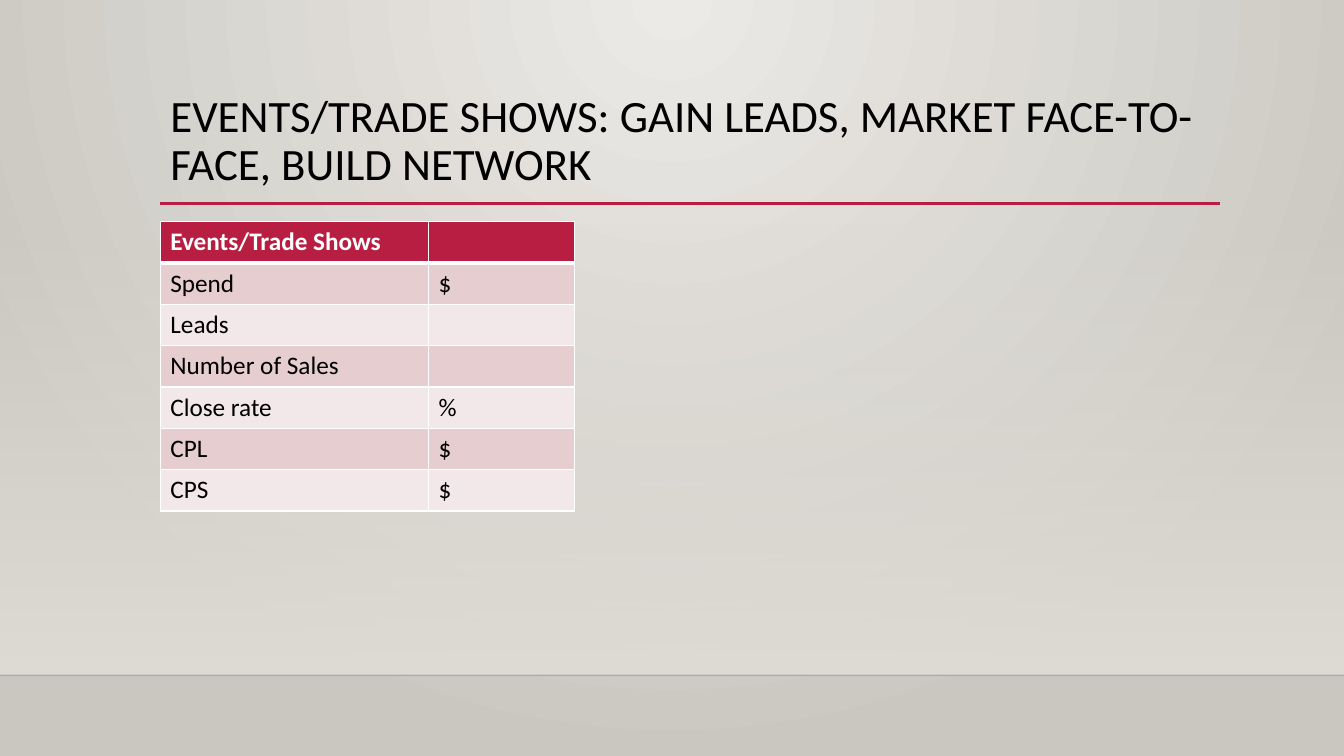
from lxml.etree import SubElement
from pptx import Presentation
from pptx.dml.color import RGBColor
from pptx.enum.shapes import MSO_CONNECTOR, MSO_SHAPE
from pptx.enum.text import MSO_ANCHOR, PP_ALIGN
from pptx.oxml.ns import qn
from pptx.util import Inches, Pt

TITLE = "EVENTS/TRADE SHOWS: GAIN LEADS, MARKET FACE-TO-FACE, BUILD NETWORK"
METRICS = [
    ("Events/Trade Shows", ""),
    ("Spend", "$"),
    ("Leads", ""),
    ("Number of Sales", ""),
    ("Close rate", "%"),
    ("CPL", "$"),
    ("CPS", "$"),
]
COLUMN_WIDTHS = (2.66, 1.45)
ROW_HEIGHT = 0.41
LEFT = 1.59
FLOOR_TOP = 6.7
SLIDE_WIDTH = 13.33

FONT = "Calibri"
BLACK = RGBColor(0x00, 0x00, 0x00)
WHITE = RGBColor(0xFF, 0xFF, 0xFF)
CRIMSON = RGBColor(0xB7, 0x1E, 0x42)
PINK = RGBColor(0xE6, 0xCD, 0xCF)
PALE_PINK = RGBColor(0xF3, 0xE8, 0xE9)
LIGHT_STONE = RGBColor(0xEC, 0xEA, 0xE7)
DARK_STONE = RGBColor(0xCA, 0xC7, 0xC1)
STONE = RGBColor(0xDF, 0xDB, 0xD5)


def set_alpha(color, percent):
    SubElement(color, qn("a:alpha"), val=str(percent * 1000))


def set_gradient(fill, colors):
    fill.gradient()
    for stop, color in zip(fill.gradient_stops, colors):
        stop.color.rgb = color
    return fill


def add_rule(slide, start, end, y, color, width):
    rule = slide.shapes.add_connector(
        MSO_CONNECTOR.STRAIGHT, Inches(start), Inches(y), Inches(end), Inches(y))
    rule.line.color.rgb = color
    rule.line.width = Pt(width)
    SubElement(rule._element.spPr, qn("a:effectLst"))
    return rule


def add_border(cell, side, width):
    border = SubElement(cell._tc.get_or_add_tcPr(), qn(f"a:ln{side}"), w=str(Pt(width)))
    SubElement(SubElement(border, qn("a:solidFill")), qn("a:srgbClr"), val=str(WHITE))


def format_text(paragraph, size, color, bold=False):
    font = paragraph.font
    for run in paragraph.runs:
        font = run.font
    font.name, font.size, font.bold = FONT, Pt(size), bold
    font.color.rgb = color


def add_backdrop(slide):
    set_gradient(slide.background.fill, (LIGHT_STONE, DARK_STONE))
    gradient = slide._element.find(".//" + qn("a:gradFill"))
    gradient.remove(gradient.find(qn("a:lin")))
    circle = SubElement(gradient, qn("a:path"), path="circle")
    SubElement(circle, qn("a:fillToRect"), l="43000", t="0", r="43000", b="100000")

    haze = slide.shapes.add_shape(
        MSO_SHAPE.RECTANGLE, 0, Inches(2.21), Inches(SLIDE_WIDTH), Inches(FLOOR_TOP - 2.21))
    haze.shadow.inherit = False
    haze.line.fill.background()
    set_gradient(haze.fill, (STONE, STONE)).gradient_angle = 270
    set_alpha(haze._element.spPr.find(".//" + qn("a:srgbClr")), 0)

    floor_edge = add_rule(slide, 0, SLIDE_WIDTH, FLOOR_TOP, BLACK, 1)
    set_alpha(floor_edge._element.spPr.find(".//" + qn("a:srgbClr")), 20)
    add_rule(slide, LEFT, 12.1, 2.02, CRIMSON, 2.5)


def add_title(slide):
    title = slide.shapes.title
    title.left, title.top = Inches(LEFT), Inches(0.88)
    title.width, title.height = Inches(10.5), Inches(1.15)
    title.text_frame.text = TITLE
    title.text_frame.word_wrap = True
    title.text_frame.vertical_anchor = MSO_ANCHOR.TOP
    heading = title.text_frame.paragraphs[0]
    heading.alignment = PP_ALIGN.LEFT
    heading.line_spacing = 0.9
    format_text(heading, 32, BLACK)


def add_metrics(slide):
    table = slide.shapes.add_table(
        len(METRICS), len(COLUMN_WIDTHS), Inches(LEFT), Inches(2.2),
        Inches(sum(COLUMN_WIDTHS)), Inches(ROW_HEIGHT * len(METRICS))).table
    for column, width in zip(table.columns, COLUMN_WIDTHS):
        column.width = Inches(width)
    for row, values in enumerate(METRICS):
        table.rows[row].height = Inches(ROW_HEIGHT)
        header = row == 0
        shade = CRIMSON if header else (PALE_PINK, PINK)[row % 2]
        for column, value in enumerate(values):
            cell = table.cell(row, column)
            for side in "LRTB":
                heavy = (row, side) in ((0, "B"), (1, "T"))
                add_border(cell, side, 3 if heavy else 1)
            cell.fill.solid()
            cell.fill.fore_color.rgb = shade
            cell.text_frame.text = value
            format_text(cell.text_frame.paragraphs[0], 18, WHITE if header else BLACK, header)


def main():
    """Build the events and trade shows metrics slide."""
    deck = Presentation()
    deck.slide_width, deck.slide_height = Inches(SLIDE_WIDTH), Inches(7.5)
    slide = deck.slides.add_slide(deck.slide_layouts[5])
    add_backdrop(slide)
    add_title(slide)
    add_metrics(slide)
    deck.save("out.pptx")


if __name__ == "__main__":
    main()
